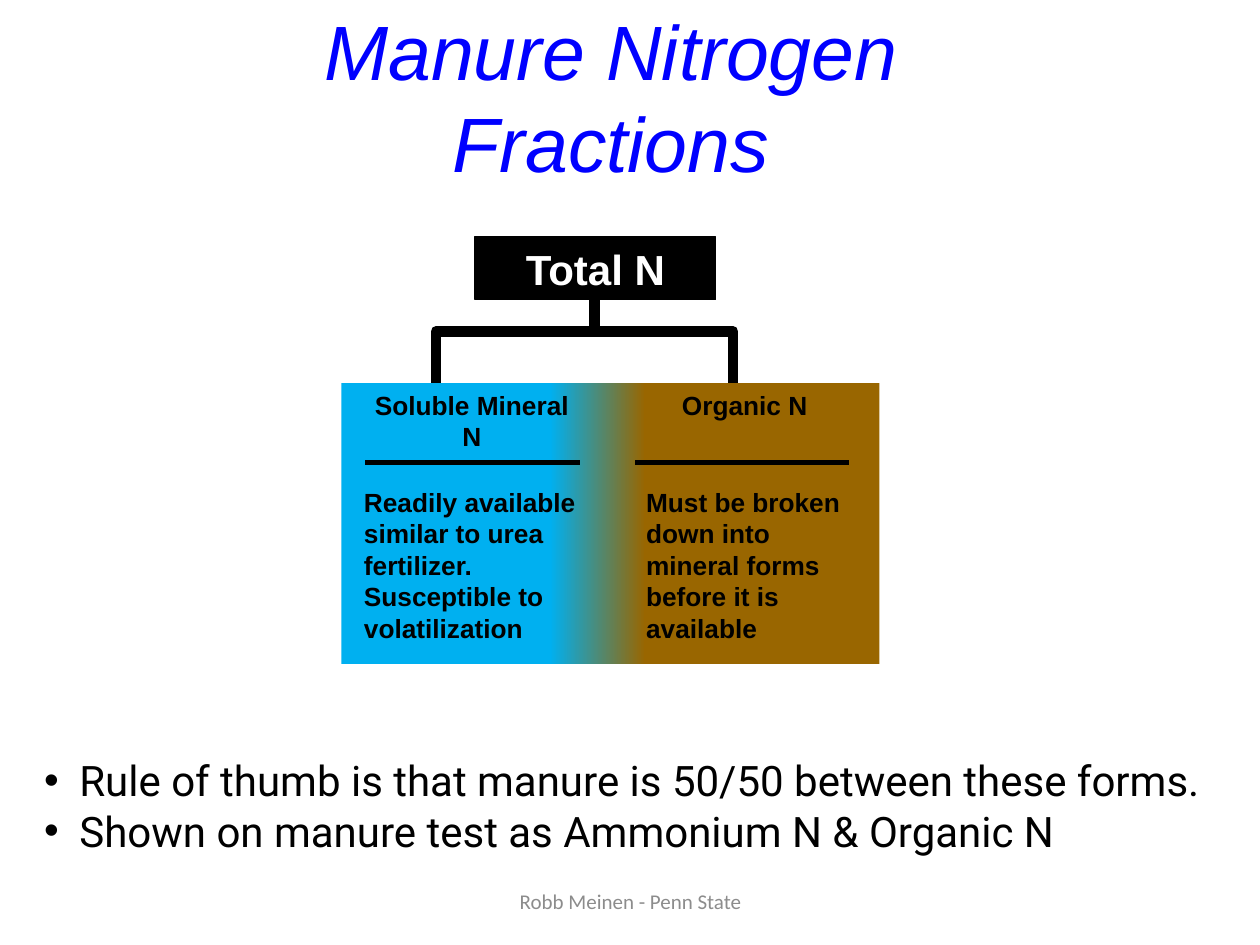
from lxml import etree
from pptx import Presentation
from pptx.dml.color import RGBColor
from pptx.enum.shapes import MSO_CONNECTOR, MSO_SHAPE
from pptx.enum.text import MSO_ANCHOR, MSO_AUTO_SIZE, PP_ALIGN
from pptx.oxml.ns import qn
from pptx.util import Inches, Pt

THEME = {
    "title": dict(name="Arial", size=44, color="0000FF", italic=True),
    "root": dict(name="Arial", size=24, color="FFFFFF", bold=True),
    "branch": dict(name="Arial", size=15, color="000000", bold=True),
    "list": dict(name="Roboto", size=24, color="000000"),
    "footer": dict(name="Calibri", size=12, color="8C8C8C"),
    "line": "000000", "mineral": "00B0F0", "organic": "996600",
}
TITLE = "Manure Nitrogen Fractions"
ROOT = "Total N"
# Column and text positions are (left, width); rule is (start, end)
BRANCHES = [
    dict(head="Soluble Mineral N", color="mineral", block=(2.71, 1.73),
         head_at=(2.79, 1.91), body_at=(2.79, 1.91), rule=(2.9, 4.6),
         body=["Readily available similar to urea fertilizer.",
               "Susceptible to volatilization"]),
    dict(head="Organic N", color="organic", block=(4.77, 2.21),
         head_at=(4.85, 2.12), body_at=(5.03, 1.94), rule=(5.04, 6.74),
         body=["Must be broken down into mineral forms before it is available"]),
]
POINTS = ["Rule of thumb is that manure is 50/50 between these forms.",
          "Shown on manure test as Ammonium N & Organic N"]
FOOTER = "Robb Meinen - Penn State"
BLOCK_TOP, BLOCK_H, RULE_Y, BODY_TOP = 3.04, 2.23, 3.67, 3.81
BRACKET_TOP, STEM_X = 2.63, 4.72


def rgb(value):
    return RGBColor.from_string(value)


def place(shape, *box):
    for key, value in zip(("left", "top", "width", "height"), box):
        setattr(shape, key, Inches(value))


def write(shape, lines, style, align=PP_ALIGN.LEFT, anchor=MSO_ANCHOR.TOP, bullet=False):
    tf = shape.text_frame
    tf.word_wrap, tf.auto_size, tf.vertical_anchor = True, MSO_AUTO_SIZE.NONE, anchor
    for i, line in enumerate(lines):
        p = tf.paragraphs[0] if i == 0 else tf.add_paragraph()
        p.alignment, p.space_before = align, Pt(0)
        if bullet:
            pPr = p._p.get_or_add_pPr()
            pPr.set("marL", str(Inches(0.28)))
            pPr.set("indent", str(-Inches(0.28)))
            etree.SubElement(pPr, qn("a:buFont"), typeface="Arial")
            etree.SubElement(pPr, qn("a:buChar"), char="•")
        r = p.add_run()
        r.text = line
        for key, value in THEME[style].items():
            if key == "color":
                r.font.color.rgb = rgb(value)
            else:
                setattr(r.font, key, Pt(value) if key == "size" else value)


def add_text(s, box, *args, **kwargs):
    write(s.shapes.add_textbox(*map(Inches, box)), *args, **kwargs)


def add_rect(s, box, fill=None, line_width=0):
    sp = s.shapes.add_shape(MSO_SHAPE.RECTANGLE, *map(Inches, box))
    sp.shadow.inherit = False
    if fill:
        sp.fill.solid()
        sp.fill.fore_color.rgb = rgb(fill)
    else:
        sp.fill.background()
    if line_width:
        sp.line.color.rgb = rgb(THEME["line"])
        sp.line.width = Pt(line_width)
    else:
        sp.line.fill.background()
    return sp


def add_line(s, x1, y1, x2, y2, width):
    c = s.shapes.add_connector(MSO_CONNECTOR.STRAIGHT, *map(Inches, (x1, y1, x2, y2)))
    c.line.color.rgb = rgb(THEME["line"])
    c.line.width = Pt(width)
    etree.SubElement(c._element.spPr, qn("a:effectLst"))


def blend(shape, stops):
    """Fill with a left-to-right gradient of (percent, colour) stops."""
    shape.fill.gradient()
    shape.fill.gradient_angle = 0
    gs_lst = shape._element.spPr.find(qn("a:gradFill")).find(qn("a:gsLst"))
    for gs in list(gs_lst):
        gs_lst.remove(gs)
    for percent, color in stops:
        gs = etree.SubElement(gs_lst, qn("a:gs"), pos=str(percent * 1000))
        etree.SubElement(gs, qn("a:srgbClr"), val=color)


def main():
    prs = Presentation()
    prs.slide_width, prs.slide_height = Inches(10), Inches(7.5)
    s = prs.slides.add_slide(prs.slide_layouts[1])
    title, body = s.placeholders
    place(title, 1.51, 0.46, 6.68, 0.6)
    write(title, [TITLE], "title", PP_ALIGN.CENTER, MSO_ANCHOR.MIDDLE)

    add_rect(s, (3.46, BRACKET_TOP, 2.36, 0.78), line_width=6)
    root = add_rect(s, (3.77, 1.88, 1.91, 0.5), THEME["line"], 0.75)
    write(root, [ROOT], "root", PP_ALIGN.CENTER, MSO_ANCHOR.MIDDLE)
    add_line(s, STEM_X, BRACKET_TOP, STEM_X, 2.36, 6)

    for b in BRANCHES:
        left, width = b["block"]
        add_rect(s, (left, BLOCK_TOP, width, BLOCK_H), THEME[b["color"]])
    mineral, organic = THEME["mineral"], THEME["organic"]
    blend(add_rect(s, (3.61, BLOCK_TOP, 2.29, BLOCK_H)),
          [(0, mineral), (33, mineral), (66, organic), (100, organic)])

    for b in BRANCHES:
        for key, top, height, lines, align in (
                ("head_at", BLOCK_TOP, 0.6, [b["head"]], PP_ALIGN.CENTER),
                ("body_at", BODY_TOP, 1.4, b["body"], PP_ALIGN.LEFT)):
            left, width = b[key]
            add_text(s, (left, top, width, height), lines, "branch", align)
        start, end = b["rule"]
        add_line(s, start, RULE_Y, end, RULE_Y, 3)

    place(body, 0.25, 5.94, 9.42, 0.91)
    write(body, POINTS, "list", bullet=True)
    add_text(s, (3.42, 6.95, 3.17, 0.4), [FOOTER], "footer",
             PP_ALIGN.CENTER, MSO_ANCHOR.MIDDLE)
    prs.save("out.pptx")


if __name__ == "__main__":
    main()
